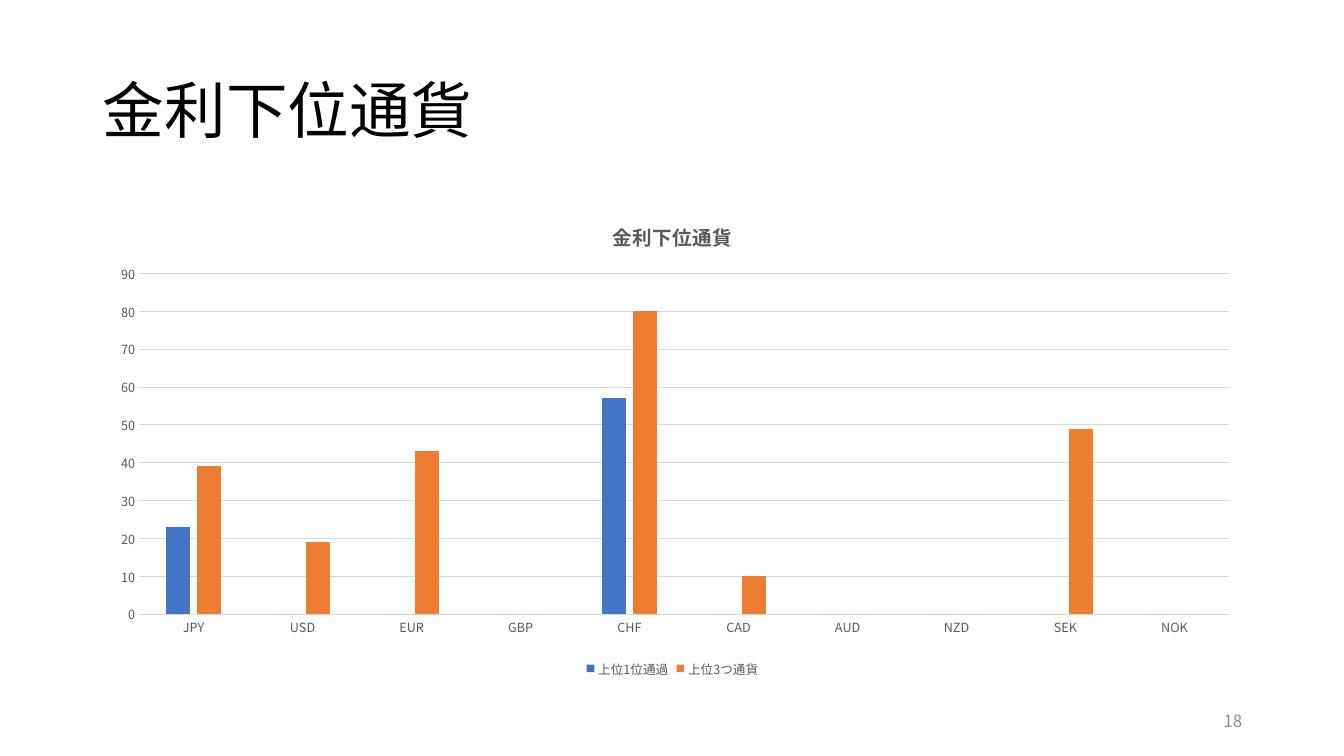
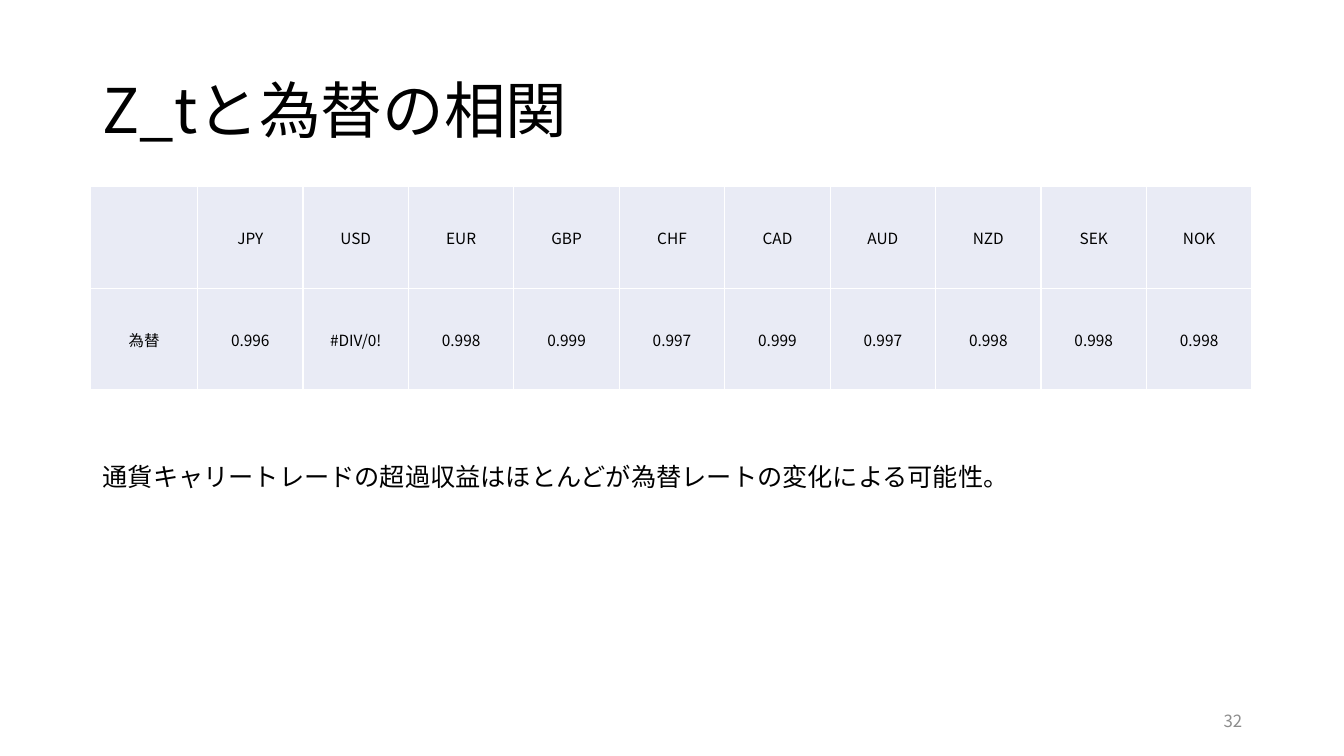
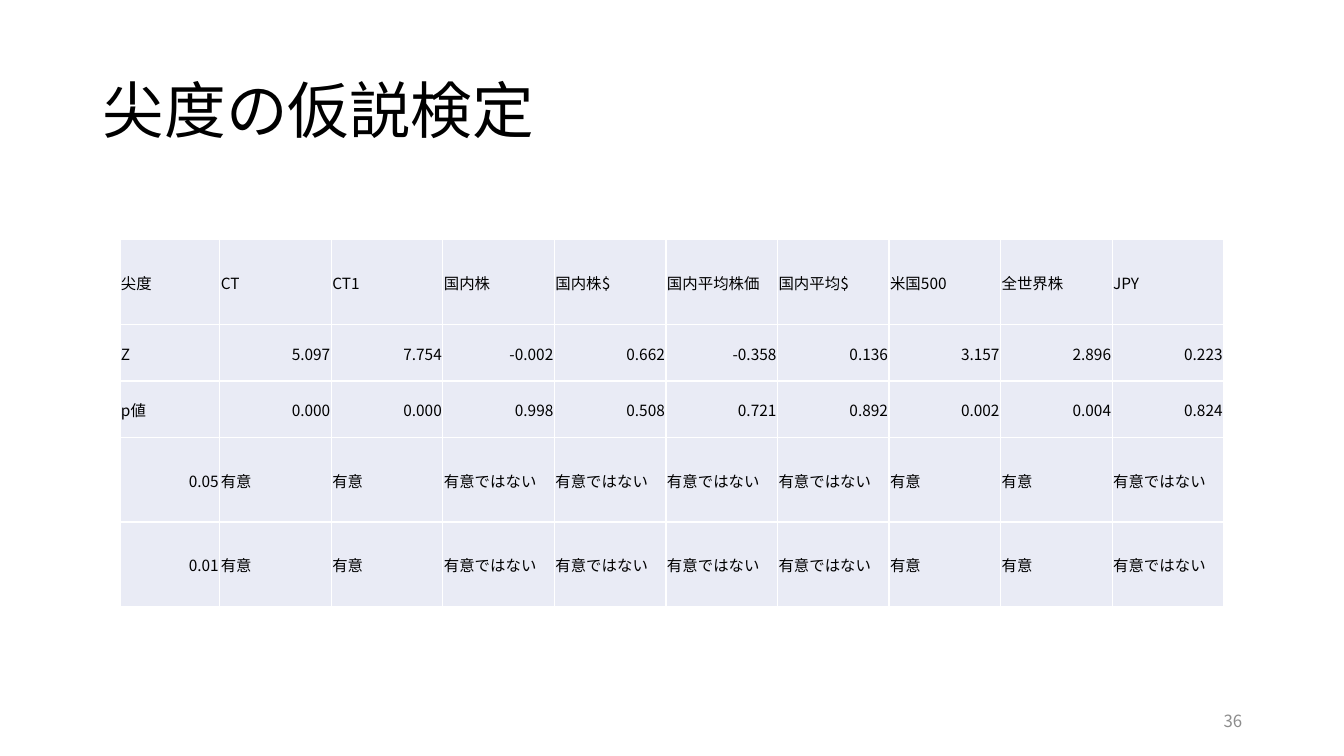
from lxml import etree
from pptx import Presentation
from pptx import util as u
from pptx.chart.data import CategoryChartData
from pptx.dml.color import RGBColor
from pptx.enum import chart as ch, text as tx
from pptx.oxml.ns import qn

FONT = "Noto Sans CJK JP"
HUES = {
    "ink": "000000", "gray": "595959", "page": "8C8C8C", "grid": "D9D9D9",
    "cell": "E9EBF5", "edge": "FFFFFF", "blue": "4472C4", "orange": "ED7D31",
}
SCALE = 9144  # EMU per px, 100 px to the inch
LEFT, WIDE = 92, 1150
AL = tx.PP_ALIGN
MID = tx.MSO_ANCHOR.MIDDLE


def px(n):
    return u.Emu(round(n * SCALE))


def hue(name):
    return RGBColor.from_string(HUES[name])


class Deck:
    def __init__(self):
        self.prs = Presentation()
        self.prs.slide_width, self.prs.slide_height = px(1333), px(750)

    def style(self, font, size, color="ink"):
        font.size, font.name = u.Pt(size), FONT
        font.color.rgb = hue(color)
        # East Asian face follows the Latin one
        latin = font._element.find(qn("a:latin"))
        east = etree.Element(qn("a:ea"), typeface=FONT)
        latin.addnext(east)

    def fill(self, frame, words, size, color="ink", align=AL.LEFT):
        frame.text = words
        para = frame.paragraphs[0]
        para.alignment = align
        for run in para.runs:
            self.style(run.font, size, color)
        return para

    def slide(self, title, page):
        self.cur = self.prs.slides.add_slide(self.prs.slide_layouts[5])
        head = self.cur.shapes.title
        head.left, head.top = px(LEFT), px(40)
        head.width, head.height = px(WIDE), px(145)
        head.text_frame.vertical_anchor = MID
        self.fill(head.text_frame, title, 44).line_spacing = 0.9
        self.label(page, 942, 695, 300, 12, "page", AL.RIGHT, MID)

    def label(self, words, x, y, w, size, color="ink", align=AL.LEFT,
              anchor=tx.MSO_ANCHOR.TOP):
        box = self.cur.shapes.add_textbox(px(x), px(y), px(w), px(40))
        frame = box.text_frame
        frame.word_wrap, frame.vertical_anchor = True, anchor
        self.fill(frame, words, size, color, align)

    def edge(self, cell):
        props = cell._tc.get_or_add_tcPr()
        for side in ("lnL", "lnR", "lnT", "lnB"):
            line = etree.SubElement(props, qn("a:" + side), w=str(u.Pt(1)))
            fill = etree.SubElement(line, qn("a:solidFill"))
            etree.SubElement(fill, qn("a:srgbClr"), val=HUES["edge"])

    def table(self, rows, x, y, w, first, highs, align):
        """The first column has its own width; the others share the rest."""
        count = len(rows[0])
        grid = self.cur.shapes.add_table(
            len(rows), count, px(x), px(y), px(w), px(sum(highs))).table
        grid.first_row = grid.horz_banding = False
        for i, col in enumerate(grid.columns):
            col.width = px((w - first) / (count - 1) if i else first)
        for r, row in enumerate(rows):
            grid.rows[r].height = px(highs[r])
            for c, words in enumerate(row):
                cell = grid.cell(r, c)
                self.edge(cell)
                cell.fill.solid()
                cell.fill.fore_color.rgb = hue("cell")
                cell.vertical_anchor = MID
                cell.margin_left = cell.margin_right = cell.margin_top = px(1)
                cell.margin_bottom = 0
                self.fill(cell.text_frame, words, 11, align=align(words))

    def line(self, fmt):
        fmt.width = u.Pt(0.75)
        fmt.color.rgb = hue("grid")

    def chart(self, title, cats, rows, x, y, w, h):
        data = CategoryChartData()
        data.categories = cats
        for name, vals, _ in rows:
            data.add_series(name, vals)
        plan = self.cur.shapes.add_chart(
            ch.XL_CHART_TYPE.COLUMN_CLUSTERED, px(x), px(y), px(w), px(h),
            data).chart
        self.style(plan.font, 10)
        plan.has_title = True
        self.fill(plan.chart_title.text_frame, title, 14, "gray", AL.CENTER)
        plan.chart_title.include_in_layout = False
        # Legend
        plan.has_legend = True
        plan.legend.position = ch.XL_LEGEND_POSITION.BOTTOM
        plan.legend.include_in_layout = False
        self.style(plan.legend.font, 9, "gray")
        # Axes
        for axis in (plan.category_axis, plan.value_axis):
            axis.major_tick_mark = axis.minor_tick_mark = ch.XL_TICK_MARK.NONE
            self.style(axis.tick_labels.font, 9, "gray")
        self.line(plan.category_axis.format.line)
        up = plan.value_axis
        up.format.line.fill.background()
        up.minimum_scale, up.maximum_scale, up.major_unit = 0, 90, 10
        self.line(up.major_gridlines.format.line)
        # Bars
        bars = plan.plots[0]
        bars.gap_width, bars.overlap = 219, -27
        bars.vary_by_categories = False
        for ser, (_, _, color) in zip(bars.series, rows):
            ser.format.fill.solid()
            ser.format.fill.fore_color.rgb = hue(color)
        self.place(plan._chartSpace.chart.plotArea)

    def place(self, area):
        """Fix the inner plot area, in shares of the chart."""
        for old in area.findall(qn("c:layout")):
            area.remove(old)
        lay = etree.Element(qn("c:layout"))
        area.insert(0, lay)
        man = etree.SubElement(lay, qn("c:manualLayout"))
        for tag, val in (("layoutTarget", "inner"), ("xMode", "edge"),
                         ("yMode", "edge"), ("x", "0.04"), ("y", "0.15"),
                         ("w", "0.94"), ("h", "0.71")):
            etree.SubElement(man, qn("c:" + tag), val=val)


def center(words):
    return AL.CENTER


def by_kind(words):
    """Numbers go right, words go left."""
    return AL.RIGHT if "." in words else AL.LEFT


def main():
    deck = Deck()
    cats = "JPY USD EUR GBP CHF CAD AUD NZD SEK NOK".split()

    # Low-rate currencies
    deck.slide("金利下位通貨", "18")
    deck.chart("金利下位通貨", cats, [
        ("上位1位通過", (23, 0, 0, 0, 57, 0, 0, 0, 0, 0), "blue"),
        ("上位3つ通貨", (39, 19, 43, 0, 80, 10, 0, 0, 49, 0), "orange"),
    ], LEFT, 200, WIDE, 476)

    # Correlation with exchange rates
    deck.slide("Z_tと為替の相関", "32")
    rates = ("為替 0.996 #DIV/0! 0.998 0.999 0.997 0.999 0.997 "
             "0.998 0.998 0.998").split()
    deck.table([[""] + cats, rates], 90, 185, 1152, 106, [101, 101], center)
    deck.label("通貨キャリートレードの超過収益はほとんどが為替レートの変化による可能性。",
               LEFT, 453, WIDE, 18)

    # Kurtosis test
    deck.slide("尖度の仮説検定", "36")
    yes, no = "有意", "有意ではない"
    marks = [yes] * 2 + [no] * 4 + [yes] * 2 + [no]
    deck.table([
        "尖度 CT CT1 国内株 国内株$ 国内平均株価 国内平均$ 米国500 全世界株 JPY".split(),
        "Z 5.097 7.754 -0.002 0.662 -0.358 0.136 3.157 2.896 0.223".split(),
        "p値 0.000 0.000 0.998 0.508 0.721 0.892 0.002 0.004 0.824".split(),
        ["0.05"] + marks,
        ["0.01"] + marks,
    ], 119, 238, 1095, 99, [84, 56, 56, 84, 84], by_kind)

    deck.prs.save("out.pptx")


if __name__ == "__main__":
    main()
